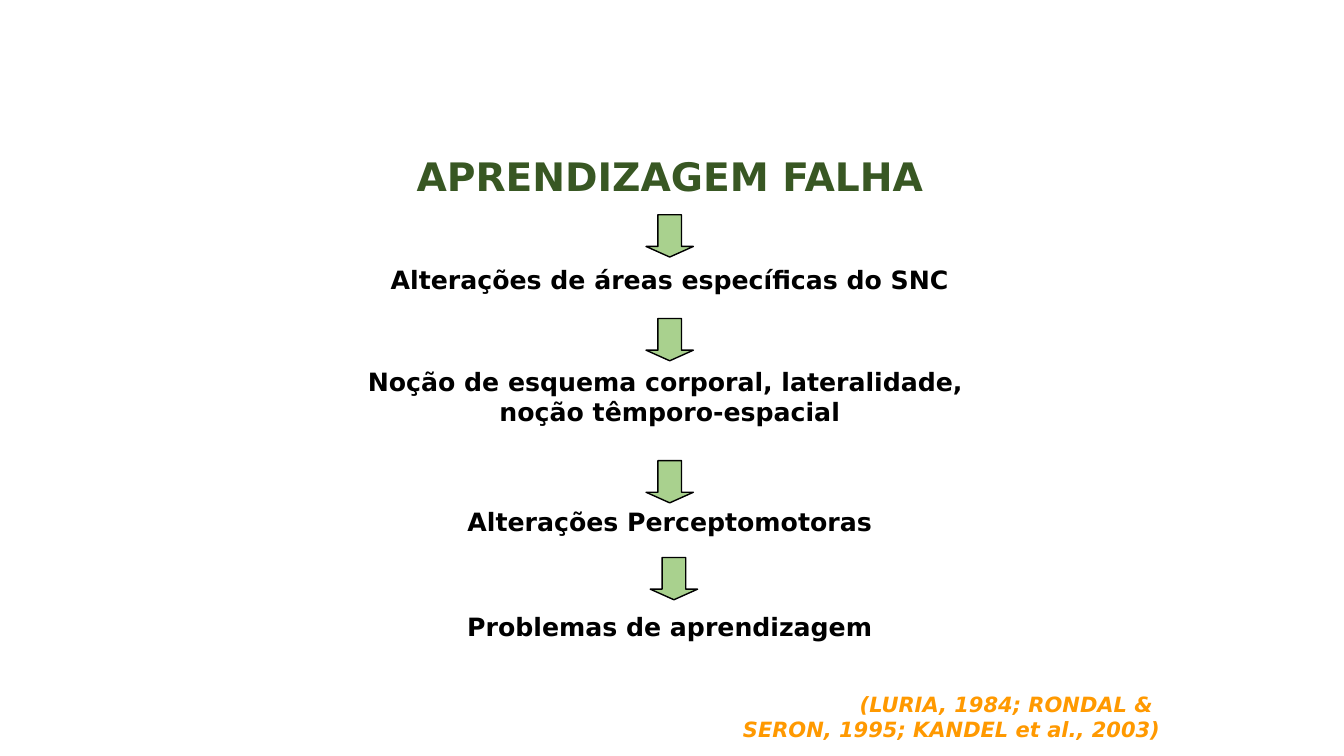
"""Build a slide showing the chain of causes behind failed learning."""
from dataclasses import dataclass

from pptx import Presentation
from pptx.dml.color import RGBColor
from pptx.enum.shapes import MSO_SHAPE
from pptx.enum.text import MSO_ANCHOR, MSO_AUTO_SIZE, PP_ALIGN
from pptx.util import Pt

DOWN_ARROW = MSO_SHAPE.DOWN_ARROW
TOP, NO_FIT = MSO_ANCHOR.TOP, MSO_AUTO_SIZE.NONE
CENTER, RIGHT = PP_ALIGN.CENTER, PP_ALIGN.RIGHT

BLACK = RGBColor(0x00, 0x00, 0x00)
DARK_GREEN = RGBColor(0x38, 0x57, 0x23)
LIGHT_GREEN = RGBColor(0xA9, 0xD1, 0x8E)
ORANGE = RGBColor(0xFF, 0x99, 0x00)
FONT = "DejaVu Sans"

AXIS = 478.4
STEP_W = 660
ARROW_W, ARROW_H = 33.8, 30.2


@dataclass
class Step:
    text: str
    top: float
    height: float
    arrow_top: float
    arrow_shift: float = 0


STEPS = [
    Step("Alterações de áreas específicas do SNC", 185, 28.8, 153.4),
    Step("Noção de esquema corporal, lateralidade, \nnoção têmporo-espacial",
         257.8, 51.1, 227.5),
    Step("Alterações Perceptomotoras", 357.8, 28.8, 329),
    Step("Problemas de aprendizagem", 433.4, 28.8, 398.2, 3),
]


def write(sp, text: str, *, size: float = 18, color: RGBColor = BLACK,
          align: PP_ALIGN = CENTER, italic: bool = False) -> None:
    tf = sp.text_frame
    tf.word_wrap = True
    tf.auto_size = NO_FIT
    tf.vertical_anchor = TOP
    p = tf.paragraphs[0]
    p.alignment = align
    p.line_spacing = 1.0
    p.space_before = Pt(0)
    for i, line in enumerate(text.split("\n")):
        if i:
            p.add_line_break()
        r = p.add_run()
        r.text = line
        r.font.name = FONT
        r.font.size = Pt(size)
        r.font.bold = True
        r.font.italic = italic
        r.font.color.rgb = color


def add_step(s, step: Step) -> None:
    sp = s.shapes.add_textbox(Pt(AXIS - STEP_W / 2), Pt(step.top),
                              Pt(STEP_W), Pt(step.height))
    write(sp, step.text)
    left = AXIS + step.arrow_shift - ARROW_W / 2
    arrow = s.shapes.add_shape(DOWN_ARROW, Pt(left), Pt(step.arrow_top),
                               Pt(ARROW_W), Pt(ARROW_H))
    arrow.adjustments[0] = 0.5
    arrow.adjustments[1] = 0.25
    arrow.shadow.inherit = False
    arrow.fill.solid()
    arrow.fill.fore_color.rgb = LIGHT_GREEN
    arrow.line.color.rgb = BLACK
    arrow.line.width = Pt(1)


def main() -> None:
    prs = Presentation()
    prs.slide_width, prs.slide_height = Pt(960), Pt(540)
    s = prs.slides.add_slide(prs.slide_layouts[5])

    title = s.shapes.title
    title.left, title.top = Pt(249.4), Pt(105.1)
    title.width, title.height = Pt(458), Pt(41)
    write(title, "APRENDIZAGEM FALHA", size=28, color=DARK_GREEN)

    for step in STEPS:
        add_step(s, step)

    citation = s.shapes.add_textbox(Pt(516.2), Pt(490.3), Pt(319.7), Pt(43.2))
    write(citation, "(LURIA, 1984; RONDAL & \nSERON, 1995; KANDEL et al., 2003)",
          size=15, color=ORANGE, align=RIGHT, italic=True)

    prs.save("out.pptx")


if __name__ == "__main__":
    main()
